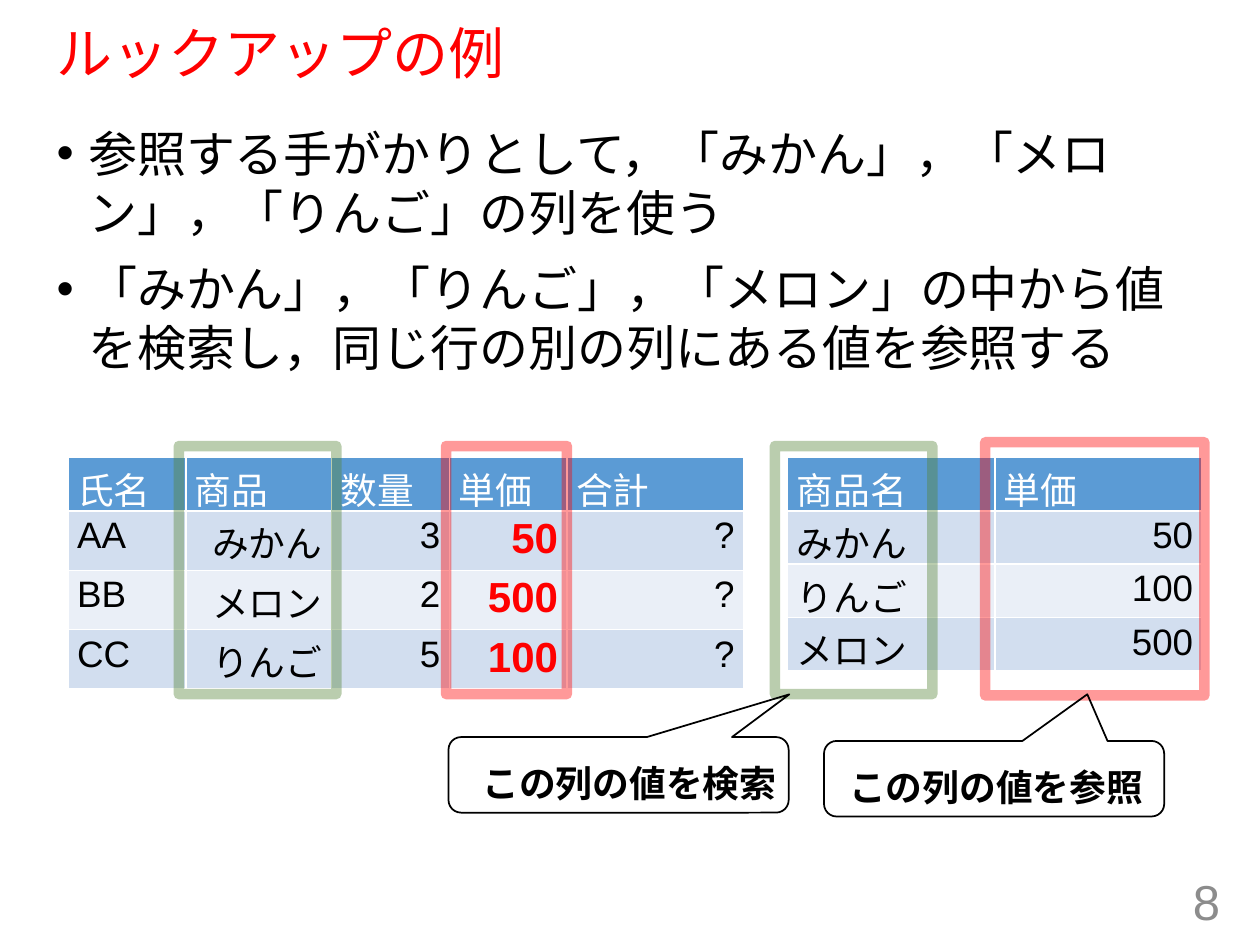
"""Build the slide that explains a lookup with two tables."""
from lxml import etree
from pptx import Presentation
from pptx.dml.color import RGBColor
from pptx.enum.shapes import MSO_SHAPE
from pptx.enum.text import MSO_ANCHOR, MSO_AUTO_SIZE, PP_ALIGN
from pptx.oxml.ns import qn
from pptx.util import Pt

RECTANGLE = MSO_SHAPE.RECTANGLE
CALLOUT = MSO_SHAPE.ROUNDED_RECTANGULAR_CALLOUT
TOP, MIDDLE = MSO_ANCHOR.TOP, MSO_ANCHOR.MIDDLE
LEFT, RIGHT = PP_ALIGN.LEFT, PP_ALIGN.RIGHT
NO_AUTOFIT = MSO_AUTO_SIZE.NONE

COLORS = {
    "text": "000000",
    "red": "FF0000",
    "green": "548235",
    "gray": "8C8C8C",
    "header": "5B9BD5",
    "header_text": "FFFFFF",
    "odd_row": "D2DEEF",
    "even_row": "EAEFF7",
}


def color(name):
    return RGBColor.from_string(COLORS[name])


def add_run(paragraph, text, size, color_name, bold=False, alignment=LEFT):
    paragraph.alignment = alignment
    run = paragraph.add_run()
    run.text = text
    run.font.name = "Arial"
    run.font.size = Pt(size)
    run.font.bold = bold
    run.font.color.rgb = color(color_name)


presentation = Presentation()
presentation.slide_width, presentation.slide_height = Pt(720), Pt(540)
slide = presentation.slides.add_slide(presentation.slide_layouts[1])

title = slide.shapes.title
title.left, title.top, title.width, title.height = Pt(25.2), Pt(13.7), Pt(666), Pt(36.7)
title.text_frame.auto_size = NO_AUTOFIT
title.text_frame.vertical_anchor = MIDDLE
title.text_frame.paragraphs[0].line_spacing = 0.9
add_run(title.text_frame.paragraphs[0], "ルックアップの例", 32, "red")

body = slide.placeholders[1]
body.left, body.top, body.width, body.height = Pt(25.2), Pt(67), Pt(666), Pt(419.8)
body.text_frame.auto_size = NO_AUTOFIT
body.text_frame.vertical_anchor = TOP
bullets = [
    "参照する手がかりとして，「みかん」，「メロン」，「りんご」の列を使う",
    "「みかん」，「りんご」，「メロン」の中から値を検索し，同じ行の別の列にある値を参照する",
]
for index, text in enumerate(bullets):
    paragraph = body.text_frame.add_paragraph() if index else body.text_frame.paragraphs[0]
    properties = paragraph._p.get_or_add_pPr()
    properties.set("marL", str(Pt(18)))
    properties.set("indent", str(-Pt(18)))
    paragraph.space_before = Pt(10 if index else 0)
    add_run(paragraph, text, 28, "text")

page_number = slide.shapes.add_textbox(Pt(542.2), Pt(500.4), Pt(162), Pt(28.8))
page_number.text_frame.word_wrap = True
page_number.text_frame.vertical_anchor = MIDDLE
add_run(page_number.text_frame.paragraphs[0], "8", 28, "gray", alignment=RIGHT)

price_rows = [["商品名", "単価"], ["みかん", "50"], ["りんご", "100"], ["メロン", "500"]]
order_rows = [
    ["氏名", "商品", "数量", "単価", "合計"],
    ["AA", "みかん", "3", "50", "?"],
    ["BB", "メロン", "2", "500", "?"],
    ["CC", "りんご", "5", "100", "?"],
]
tables = [
    (450, [118.5, 118.5], 30.5, price_rows, None),
    (38.9, [67.3, 83.3, 67.3, 67.3, 100.8], 33.9, order_rows, 3),
]
for left, widths, row_height, rows, result_column in tables:
    heights = [30.5] + [row_height] * 3
    frame = slide.shapes.add_table(
        len(rows), len(widths), Pt(left), Pt(261.4), Pt(sum(widths)), Pt(sum(heights))
    )
    table = frame.table
    for column, width in zip(table.columns, widths):
        column.width = Pt(width)
    for row_index, values in enumerate(rows):
        table.rows[row_index].height = Pt(heights[row_index])
        fill_name = "odd_row" if row_index % 2 else "even_row"
        for column_index, value in enumerate(values):
            cell = table.cell(row_index, column_index)
            cell.margin_left = cell.margin_right = Pt(5.2)
            cell.margin_top = cell.margin_bottom = Pt(2.6)
            cell.fill.solid()
            cell.fill.fore_color.rgb = color(fill_name if row_index else "header")
            paragraph = cell.text_frame.paragraphs[0]
            if row_index == 0:
                add_run(paragraph, value, 21, "header_text")
            elif column_index == result_column:
                add_run(paragraph, value, 24, "red", True, RIGHT)
            else:
                alignment = RIGHT if column_index else LEFT
                add_run(paragraph, value, 21, "text", alignment=alignment)

column_frames = [
    (563, 252.7, 125.3, 144.7, "red"),
    (254.9, 254.9, 69.1, 141.8, "red"),
    (102.2, 254.9, 90, 141.8, "green"),
    (442.8, 254.9, 90, 141.8, "green"),
]
for left, top, width, height, color_name in column_frames:
    shape = slide.shapes.add_shape(RECTANGLE, Pt(left), Pt(top), Pt(width), Pt(height))
    shape.shadow.inherit = False
    shape.fill.background()
    shape.line.color.rgb = color(color_name)
    shape.line.width = Pt(6)
    line_color = shape.line._ln.find(".//" + qn("a:srgbClr"))
    etree.SubElement(line_color, qn("a:alpha")).set("val", "40000")

callouts = [
    (470.9, 423.4, (0.274, -1.117), 478.1, 433.4, "この列の値を参照"),
    (256.3, 421.2, (0.502, -1.065), 268.6, 431.3, "この列の値を検索"),
]
for left, top, tip, label_left, label_top, text in callouts:
    callout = slide.shapes.add_shape(CALLOUT, Pt(left), Pt(top), Pt(194.4), Pt(43.2))
    callout.adjustments[0], callout.adjustments[1] = tip
    callout.shadow.inherit = False
    callout.fill.background()
    callout.line.color.rgb = color("text")
    callout.line.width = Pt(1)
    label = slide.shapes.add_textbox(Pt(label_left), Pt(label_top), Pt(184.3), Pt(32.4))
    label.text_frame.word_wrap = False
    add_run(label.text_frame.paragraphs[0], text, 21, "text", True)

presentation.save("out.pptx")
